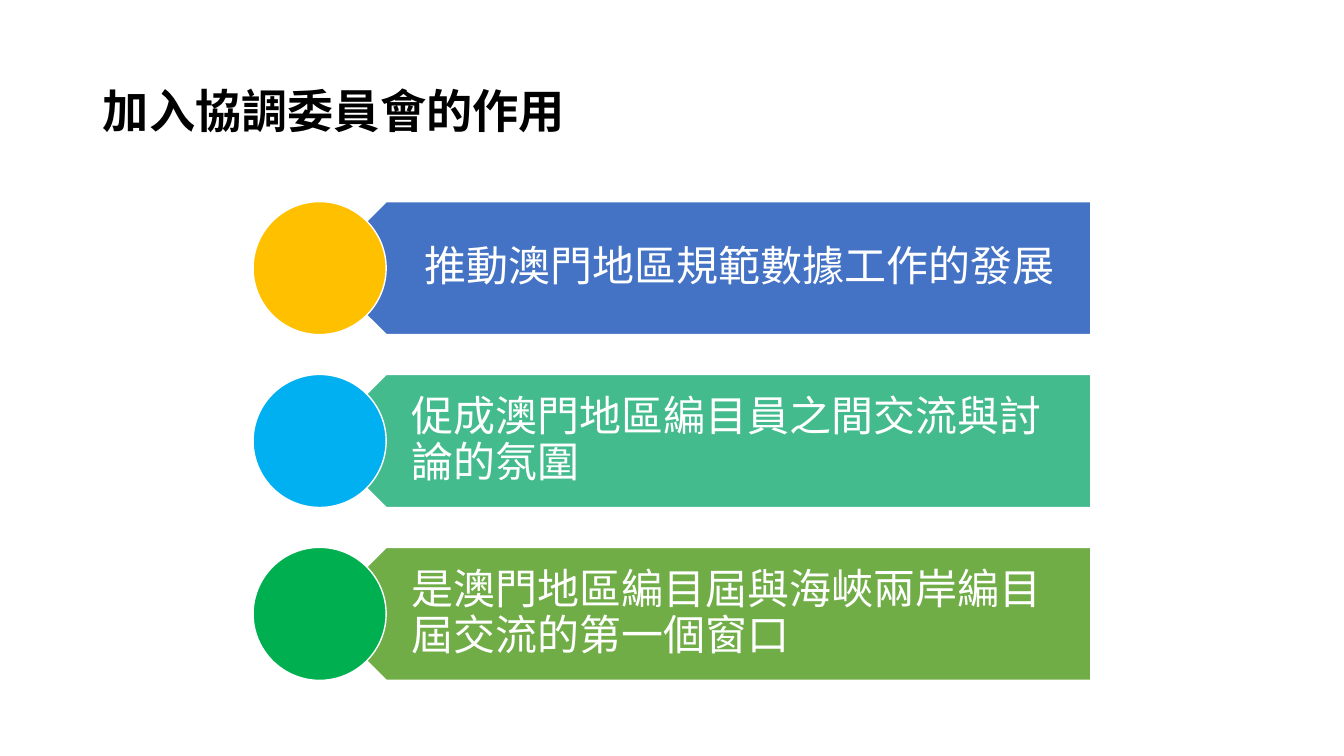
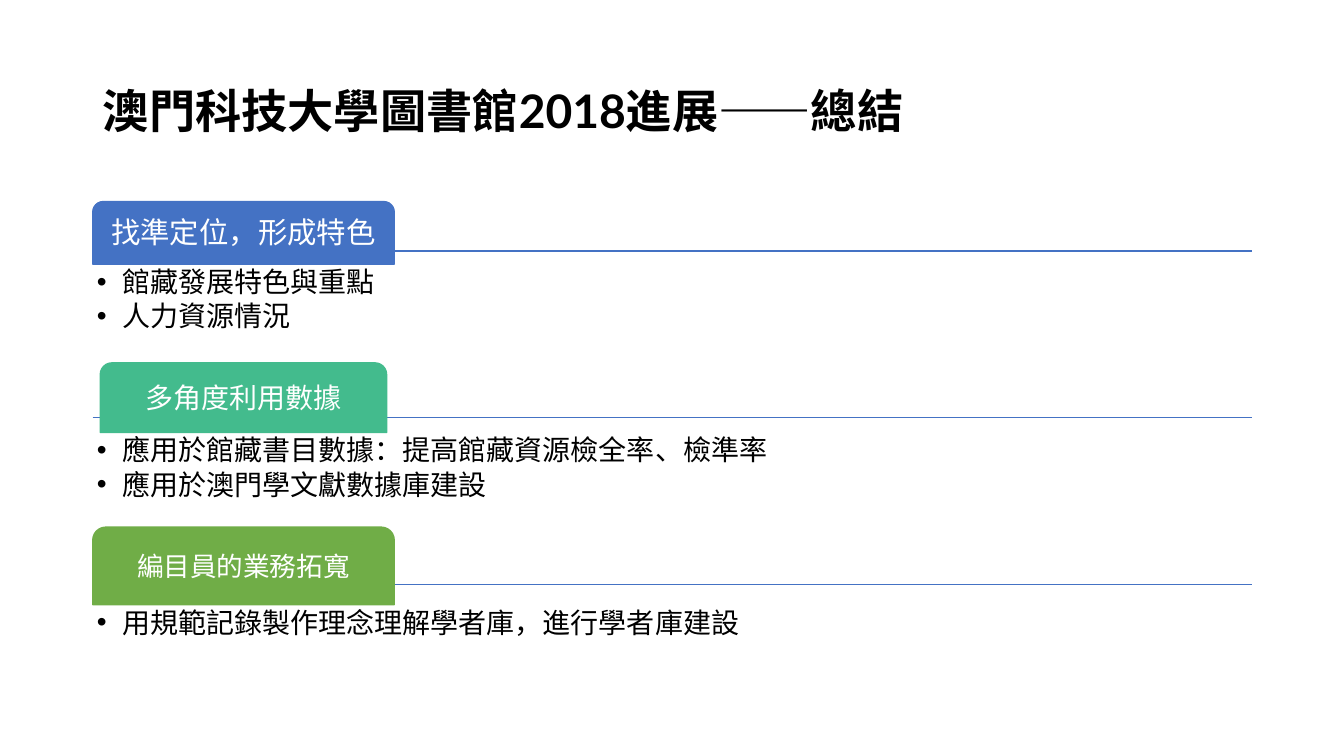
from dataclasses import dataclass

import pptx
import pptx.dml.color
import pptx.enum.shapes
import pptx.enum.text
import pptx.oxml
import pptx.oxml.ns
import pptx.util
from pptx.util import Inches

SHAPE = pptx.enum.shapes.MSO_SHAPE
ALIGN = pptx.enum.text.PP_ALIGN
ANCHOR = pptx.enum.text.MSO_ANCHOR


@dataclass(frozen=True)
class Theme:
    title_font: str = "Lato"
    body_font: str = "Calibri"
    black: str = "000000"
    white: str = "FFFFFF"
    accents: tuple = ("4472C4", "43BB8D", "70AD47")
    circles: tuple = ("FFC000", "00B0F0", "00B050")
    title_size: int = 33
    role_size: int = 30
    list_size: int = 20
    line_width: int = 1
    line_spacing: float = 0.9


THEME = Theme()

ROLES_TITLE = "加入協調委員會的作用"
ROLES = [
    ("推動澳門地區規範數據工作的發展", ALIGN.CENTER),
    ("促成澳門地區編目員之間交流與討論的氛圍", ALIGN.LEFT),
    ("是澳門地區編目屆與海峽兩岸編目屆交流的第一個窗口", ALIGN.LEFT),
]

SUMMARY_TITLE = "澳門科技大學圖書館2018進展——總結"
SECTIONS = [
    dict(head="找準定位，形成特色", size=21, top=2.0, width=2.99, height=0.62,
         rule=2.49, list_height=0.97,
         points=["館藏發展特色與重點", "人力資源情況"]),
    dict(head="多角度利用數據", size=20, top=3.6, width=2.84, height=0.69,
         rule=4.14, list_height=0.92,
         points=["應用於館藏書目數據：提高館藏資源檢全率、檢準率",
                 "應用於澳門學文獻數據庫建設"]),
    dict(head="編目員的業務拓寬", size=19, top=5.23, width=2.99, height=0.77,
         rule=5.8, list_height=0.75,
         points=["用規範記錄製作理念理解學者庫，進行學者庫建設"]),
]

LEFT, CONTENT_WIDTH = 0.92, 11.5
TOP, BOTTOM = 2.0, 6.75
TITLE_ONLY, COMPARISON = 5, 4


def rgb(value):
    return pptx.dml.color.RGBColor.from_string(value)


def write(shape, lines, size, color=THEME.black, font=THEME.body_font, bold=False,
          align=ALIGN.LEFT, anchor=ANCHOR.MIDDLE, insets=(0.04,) * 4,
          space_after=0, bullet=False):
    """Fill a shape with one paragraph per line; insets run left, top, right, bottom."""
    frame = shape.text_frame
    frame.auto_size = pptx.enum.text.MSO_AUTO_SIZE.NONE
    frame.word_wrap = True
    frame.vertical_anchor = anchor
    (frame.margin_left, frame.margin_top,
     frame.margin_right, frame.margin_bottom) = map(Inches, insets)
    for index, line in enumerate(lines):
        paragraph = frame.paragraphs[0] if index == 0 else frame.add_paragraph()
        paragraph.alignment = align
        paragraph.line_spacing = THEME.line_spacing
        paragraph.space_before = pptx.util.Pt(0)
        paragraph.space_after = pptx.util.Pt(space_after)
        run = paragraph.add_run()
        run.text = line
        run.font.name, run.font.bold = font, bold
        run.font.size = pptx.util.Pt(size)
        run.font.color.rgb = rgb(color)
        if bullet:
            add_bullet(paragraph)


def add_bullet(paragraph):
    properties = paragraph._p.get_or_add_pPr()
    properties.set("marL", str(Inches(0.25)))
    properties.set("indent", str(Inches(-0.25)))
    for tag, name, value in (("a:buFont", "typeface", "Arial"), ("a:buChar", "char", "•")):
        element = pptx.oxml.parse_xml(f"<{tag} {pptx.oxml.ns.nsdecls('a')}/>")
        element.set(name, value)
        properties.append(element)


def place(shape, left, top, width, height):
    shape.left, shape.top = Inches(left), Inches(top)
    shape.width, shape.height = Inches(width), Inches(height)


def add_slide(deck, layout, title):
    slide = deck.slides.add_slide(deck.slide_layouts[layout])
    place(slide.shapes.title, LEFT, 0.4, CONTENT_WIDTH, 1.45)
    write(slide.shapes.title, [title], THEME.title_size, font=THEME.title_font,
          bold=True, insets=(0.1, 0.05, 0.1, 0.05))
    return slide


def add_figure(slide, kind, box, fill, outline):
    figure = slide.shapes.add_shape(kind, *map(Inches, box))
    figure.shadow.inherit = False
    figure.fill.solid()
    figure.fill.fore_color.rgb = rgb(fill)
    figure.line.color.rgb = rgb(outline)
    figure.line.width = pptx.util.Pt(THEME.line_width)
    return figure


def add_rule(slide, y):
    rule = slide.shapes.add_connector(
        pptx.enum.shapes.MSO_CONNECTOR.STRAIGHT,
        Inches(LEFT), Inches(y), Inches(LEFT + CONTENT_WIDTH), Inches(y))
    rule.line.color.rgb = rgb(THEME.accents[0])
    rule.line.width = pptx.util.Pt(THEME.line_width)
    rule._element.spPr.append(
        pptx.oxml.parse_xml(f"<a:effectLst {pptx.oxml.ns.nsdecls('a')}/>"))


def build_roles(deck):
    slide = add_slide(deck, TITLE_ONLY, ROLES_TITLE)
    size, circle_left, band_width = 1.32, 2.51, 7.65
    band_left = circle_left + size / 2
    pitch = (BOTTOM - TOP - size) / (len(ROLES) - 1)
    for index, (role, align) in enumerate(ROLES):
        top = TOP + index * pitch
        band = add_figure(slide, SHAPE.PENTAGON, (band_left, top, band_width, size),
                          THEME.accents[index], THEME.white)
        band.rotation = 180
        band.adjustments[0] = 0.5
        # The band is turned round, so its upright text has a box of its own.
        label = slide.shapes.add_textbox(
            *map(Inches, (band_left + size / 4, top, band_width - size / 4, size)))
        write(label, [role], THEME.role_size, color=THEME.white, align=align,
              insets=(0.58, 0.12, 0.23, 0.12))
        add_figure(slide, SHAPE.OVAL, (circle_left, top, size, size),
                   THEME.circles[index], THEME.white)


def build_summary(deck):
    slide = add_slide(deck, COMPARISON, SUMMARY_TITLE)
    title, *bodies = slide.placeholders
    tab_center = LEFT + SECTIONS[0]["width"] / 2
    for section in SECTIONS:
        add_rule(slide, section["rule"])
    for section, body, accent in zip(SECTIONS, bodies, THEME.accents):
        top, width, height = section["top"], section["width"], section["height"]
        tab = add_figure(slide, SHAPE.ROUND_2_SAME_RECTANGLE,
                         (tab_center - width / 2, top, width, height), accent, accent)
        write(tab, [section["head"]], section["size"], color=THEME.white,
              align=ALIGN.CENTER)
        place(body, LEFT, top + height, CONTENT_WIDTH, section["list_height"])
        write(body, section["points"], THEME.list_size, anchor=ANCHOR.TOP,
              space_after=3, bullet=True)
    for spare in bodies[len(SECTIONS):]:
        spare._element.getparent().remove(spare._element)


def main():
    deck = pptx.Presentation()
    deck.slide_width, deck.slide_height = Inches(13.33), Inches(7.5)
    build_roles(deck)
    build_summary(deck)
    deck.save("out.pptx")


if __name__ == "__main__":
    main()
